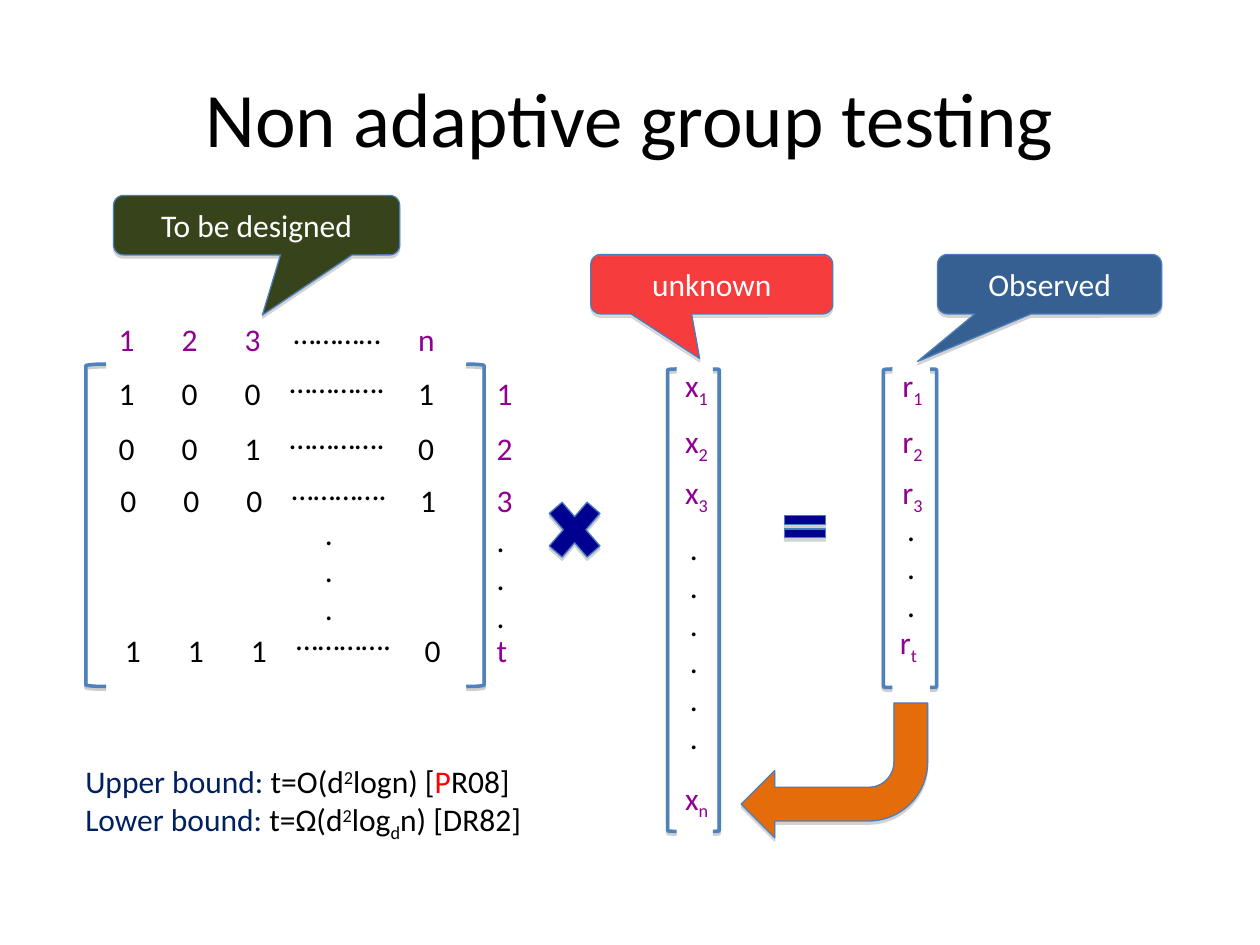
from dataclasses import dataclass

from lxml.etree import SubElement
from pptx import Presentation
from pptx.dml.color import RGBColor
from pptx.enum.shapes import MSO_SHAPE
from pptx.enum.text import MSO_ANCHOR, MSO_AUTO_SIZE, PP_ALIGN
from pptx.oxml.ns import qn
from pptx.util import Cm, Pt


@dataclass(frozen=True)
class Theme:
    font: str = "Calibri"
    title_size: int = 44
    body_size: int = 18
    text: str = "000000"
    label: str = "910091"
    heading: str = "002060"
    highlight: str = "FF0000"
    white: str = "FFFFFF"
    bracket: str = "4F81BD"
    outline: str = "4A7EBB"
    shadow: str = "808080"
    operator: str = "000090"
    designed: str = "37441B"
    observed: str = "376092"
    arrow: str = "E46C0A"


@dataclass(frozen=True)
class Box:
    """A region in centimetres."""
    left: float
    top: float
    width: float
    height: float

    def inner(self, left, top, width, height):
        return Box(self.left + left, self.top + top, width, height)

    def lengths(self):
        return [Cm(round(value, 2)) for value in
                (self.left, self.top, self.width, self.height)]


THEME = Theme()
SUBSCRIPT, SUPERSCRIPT = -25, 30
ENTRY_WIDTH, LINE_HEIGHT = 0.84, 1.02


def color(value):
    return RGBColor.from_string(value)


def style_paragraph(paragraph, text_color, size=THEME.body_size):
    paragraph.font.name = THEME.font
    paragraph.font.size = Pt(size)
    paragraph.font.color.rgb = color(text_color)


def add_run(paragraph, text, baseline=0, text_color=None):
    run = paragraph.add_run()
    run.text = text
    if text_color:
        run.font.color.rgb = color(text_color)
    if baseline:
        run._r.get_or_add_rPr().set("baseline", str(baseline * 1000))


def add_text(slide, box, lines, text_color=THEME.text, wrap=False):
    """Each line is a list of (text, baseline, colour) runs; the last two may be left out."""
    frame = slide.shapes.add_textbox(*box.lengths()).text_frame
    frame.word_wrap = wrap
    frame.auto_size = MSO_AUTO_SIZE.SHAPE_TO_FIT_TEXT
    for index, runs in enumerate(lines):
        paragraph = frame.add_paragraph() if index else frame.paragraphs[0]
        style_paragraph(paragraph, text_color)
        for run in runs:
            add_run(paragraph, *run)


def add_dots(slide, box, count):
    add_text(slide, box, [[(".",)]] * count)


def add_shadow(shape, distance, opacity):
    shape.shadow.inherit = False
    effects = shape._element.spPr.find(qn("a:effectLst"))
    shadow = SubElement(effects, qn("a:outerShdw"), blurRad="0",
                        dist=str(Pt(distance)), dir="5400000", rotWithShape="0")
    shade = SubElement(shadow, qn("a:srgbClr"), val=THEME.shadow)
    SubElement(shade, qn("a:alpha"), val=str(opacity * 1000))


def add_solid(slide, kind, box, fill, opacity=100):
    shape = slide.shapes.add_shape(kind, *box.lengths())
    shape.fill.solid()
    shape.fill.fore_color.rgb = color(fill)
    if opacity < 100:
        fill_color = shape._element.spPr.find(qn("a:solidFill"))[0]
        SubElement(fill_color, qn("a:alpha"), val=str(opacity * 1000))
    shape.line.color.rgb = color(THEME.outline)
    shape.line.width = Pt(0.75)
    add_shadow(shape, 1.8, 35)
    return shape


def add_brackets(slide, box, left_width, right_width):
    right = box.width - right_width
    for kind, offset, width in ((MSO_SHAPE.LEFT_BRACKET, 0, left_width),
                                (MSO_SHAPE.RIGHT_BRACKET, right, right_width)):
        place = box.inner(offset, 0, width, box.height)
        bracket = slide.shapes.add_shape(kind, *place.lengths())
        bracket.fill.background()
        bracket.line.color.rgb = color(THEME.bracket)
        bracket.line.width = Pt(2)
        add_shadow(bracket, 1.6, 38)


def add_title(slide, box, text):
    frame = slide.shapes.add_textbox(*box.lengths()).text_frame
    frame.word_wrap = True
    frame.vertical_anchor = MSO_ANCHOR.MIDDLE
    paragraph = frame.paragraphs[0]
    paragraph.alignment = PP_ALIGN.CENTER
    style_paragraph(paragraph, THEME.text, THEME.title_size)
    add_run(paragraph, text)


def add_matrix(slide, box):
    columns = (0.41, 1.68, 2.95, 6.45)
    # Row label, top, sideways shift, entries
    rows = (("", 0, 0, "123n"), ("1", 1.09, 0, "1001"), ("2", 2.21, 0, "0010"),
            ("3", 3.25, 0.04, "0001"), ("t", 6.27, 0.13, "1110"))
    label_left = 8.03
    for label, top, shift, entries in rows:
        entry_color = THEME.text if label else THEME.label
        for left, entry in zip(columns, entries):
            add_text(slide, box.inner(left + shift, top, ENTRY_WIDTH, LINE_HEIGHT),
                     [[(entry,)]], entry_color)
        if label:
            add_text(slide, box.inner(label_left, top, ENTRY_WIDTH, LINE_HEIGHT),
                     [[(label,)]], THEME.label)
            dots = box.inner(3.86 + shift, top - 0.23, 2.44, LINE_HEIGHT)
            add_text(slide, dots, [[("………….",)]])
        else:
            add_text(slide, box.inner(3.94, top - 0.13, 2.39, LINE_HEIGHT),
                     [[("…………",)]], wrap=True)
    # Skipped rows
    for left, top in ((4.57, 3.91), (label_left, 4.06)):
        add_dots(slide, box.inner(left, top, 0.69, 2.57), 3)
    add_brackets(slide, box.inner(0, 1.02, label_left, 6.5), 0.41, 0.36)


def add_vector(slide, box, name, last, last_place, dots_place, dot_count, entry_left):
    entry_places = [(entry_left, top) for top in (0, 1.12, 2.16)] + [last_place]
    for index, place in zip(("1", "2", "3", last), entry_places):
        add_text(slide, box.inner(*place, 0.98, LINE_HEIGHT),
                 [[(name,), (index, SUBSCRIPT)]], THEME.label)
    add_dots(slide, box.inner(*dots_place, 0.69, 0.25 + 0.77 * dot_count), dot_count)
    add_brackets(slide, box.inner(0, 0.18, box.width, box.height - 0.18), 0.18, 0.13)


def add_callout(slide, box, text, fill, tip, opacity=100):
    callout = add_solid(slide, MSO_SHAPE.ROUNDED_RECTANGULAR_CALLOUT, box, fill, opacity)
    callout.adjustments[0], callout.adjustments[1] = tip
    frame = callout.text_frame
    frame.vertical_anchor = MSO_ANCHOR.MIDDLE
    paragraph = frame.paragraphs[0]
    paragraph.alignment = PP_ALIGN.CENTER
    style_paragraph(paragraph, THEME.white)
    add_run(paragraph, text)


def add_bounds(slide, box):
    square = ("2", SUPERSCRIPT)
    add_text(slide, box, [
        [("Upper bound: ", 0, THEME.heading), ("t=O(d",), square, ("logn) [",),
         ("P", 0, THEME.highlight), ("R08]",)],
        [("Lower bound: ", 0, THEME.heading), ("t=Ω(d",), square, ("log",),
         ("d", SUBSCRIPT), ("n) [DR82]",)],
    ], wrap=True)


def main():
    presentation = Presentation()
    presentation.slide_width, presentation.slide_height = Cm(25.4), Cm(19.05)
    slide = presentation.slides.add_slide(presentation.slide_layouts[6])

    add_title(slide, Box(1.27, 0.76, 22.86, 3.18), "Non adaptive group testing")

    # Equation: matrix times unknowns equals results
    add_matrix(slide, Box(1.73, 6.32, 8.87, 7.52))
    add_vector(slide, Box(13.46, 7.26, 1.04, 9.5), "x", "n", (0.1, 8.31), (0.2, 3.28), 6, 0.1)
    add_vector(slide, Box(17.81, 7.26, 1.07, 6.6), "r", "t", (0.08, 5.18), (0.23, 2.9), 3, 0.13)
    add_solid(slide, MSO_SHAPE.MATH_MULTIPLY, Box(10.85, 9.83, 1.47, 1.7), THEME.operator)
    add_solid(slide, MSO_SHAPE.MATH_EQUAL, Box(15.67, 10.24, 1.12, 0.76), THEME.operator)

    # Callouts above each part
    add_callout(slide, Box(11.91, 5.13, 4.88, 1.2), "unknown", THEME.highlight, (-0.05, 1.25), 73)
    add_callout(slide, Box(2.29, 3.94, 5.77, 1.2), "To be designed", THEME.designed, (0.02, 1.51))
    add_callout(slide, Box(18.9, 5.13, 4.52, 1.2), "Observed", THEME.observed, (-0.59, 1.3))

    # Arrow from the results back to the unknowns
    arrow = add_solid(slide, MSO_SHAPE.BENT_ARROW, Box(14.94, 14.17, 3.76, 2.72), THEME.arrow)
    arrow.rotation = 180

    add_bounds(slide, Box(1.47, 15.24, 9.53, 1.8))
    presentation.save("out.pptx")


if __name__ == "__main__":
    main()
